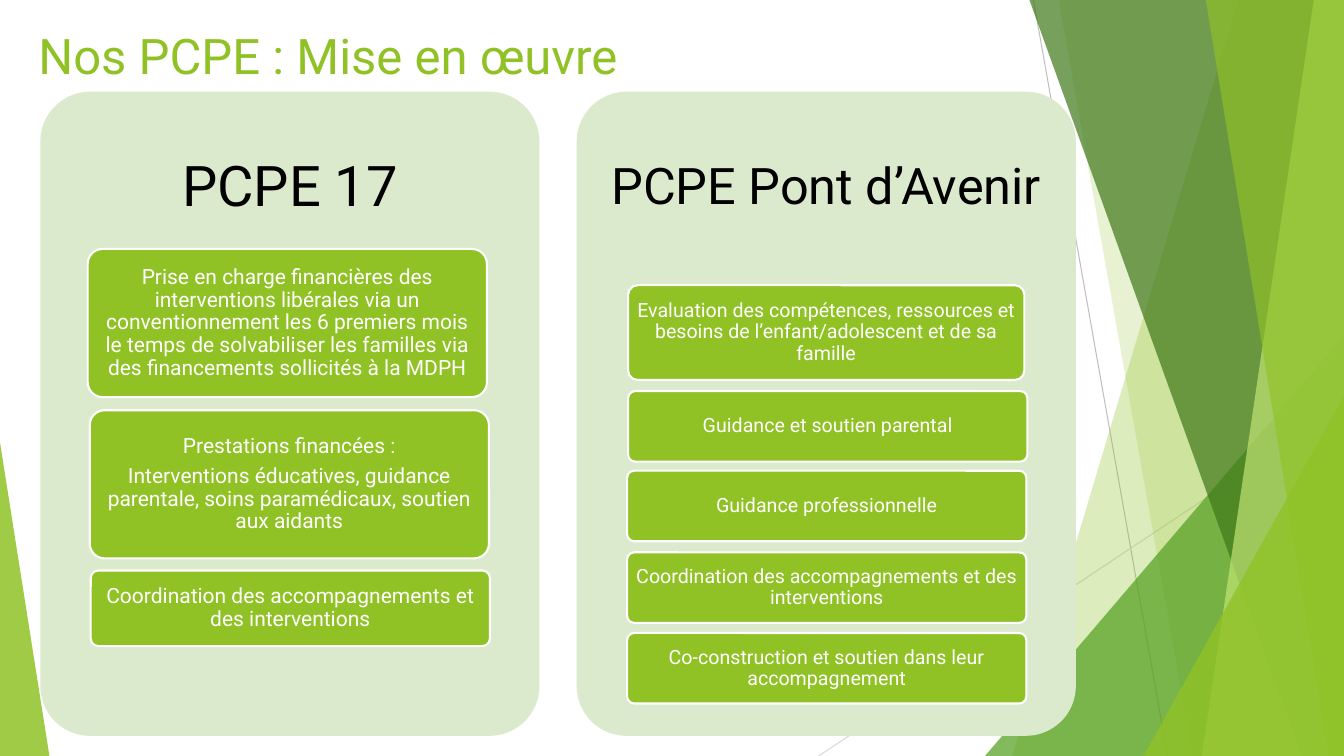
from dataclasses import dataclass

from lxml import etree
from pptx import Presentation
from pptx import util as u
from pptx.dml.color import RGBColor
from pptx.enum import shapes, text
from pptx.oxml.ns import qn

GREEN = "90C226"
PALE = "DBE9CD"
WHITE = "FFFFFF"
BLACK = "000000"
FONT = "Roboto"
WIDTH, HEIGHT = 13.33, 7.5
PANEL_TOP, PANEL_WIDTH, PANEL_HEIGHT, HEADING_HEIGHT = 0.91, 4.95, 6.39, 1.92


@dataclass
class Ray:
    start: tuple[float, float]
    end: tuple[float, float]
    colour: str


@dataclass
class Band:
    top: float
    bottom: float
    colour: str
    opacity: int


@dataclass
class Corner:
    left: float
    top: float
    width: float
    apex: float
    colour: str
    opacity: int


@dataclass
class Card:
    left: float
    top: float
    width: float
    height: float
    lines: list[str]


@dataclass
class Panel:
    left: float
    heading: str
    heading_size: int
    heading_inset: float
    card_size: int
    card_inset: float
    cards: list[Card]


RAYS = [
    Ray((10.25, 0), (11.58, HEIGHT), "BFBFBF"),
    Ray((WIDTH, 4.03), (8.12, HEIGHT), "D9D9D9"),
]
BACK_BANDS = [Band(12.28, 10.04, GREEN, 30), Band(10.5, 11.83, GREEN, 20)]
BACK_CORNER = Corner(9.77, 3.33, 3.56, 1, "54A021", 72)
FRONT_BANDS = [
    Band(10.21, 12.91, "3F7819", 70),
    Band(13.03, 11.92, "C0E474", 70),
    Band(11.96, 13.18, GREEN, 65),
]
FRONT_CORNERS = [
    Corner(11.34, 3.93, 1.99, 1, GREEN, 80),
    Corner(0, 4.39, 0.49, 0, GREEN, 85),
]
PANELS = [
    Panel(0.4, "PCPE 17", 40, 0.17, 15, 0.08, [
        Card(0.87, 2.47, 3.96, 1.47, [
            "Prise en charge financières des interventions libérales via un "
            "conventionnement les 6 premiers mois le temps de solvabiliser les "
            "familles via des financements sollicités à la MDPH"]),
        Card(0.89, 4.07, 3.96, 1.47, [
            "Prestations financées :",
            "Interventions éducatives, guidance parentale, soins paramédicaux, "
            "soutien aux aidants"]),
        Card(0.9, 5.66, 3.96, 0.75, [
            "Coordination des accompagnements et des interventions"]),
    ]),
    Panel(5.72, "PCPE Pont d’Avenir", 36, 0.15, 14, 0.06, [
        Card(6.23, 2.83, 3.93, 0.94, [
            "Evaluation des compétences, ressources et besoins de "
            "l’enfant/adolescent et de sa famille"]),
        Card(6.23, 3.88, 3.96, 0.7, ["Guidance et soutien parental"]),
        Card(6.22, 4.67, 3.96, 0.7, ["Guidance professionnelle"]),
        Card(6.22, 5.48, 3.96, 0.7, [
            "Coordination des accompagnements et des interventions"]),
        Card(6.22, 6.28, 3.96, 0.7, [
            "Co-construction et soutien dans leur accompagnement"]),
    ]),
]


def rgb(colour: str) -> RGBColor:
    return RGBColor.from_string(colour)


def apply(target, formats: dict) -> None:
    for name, value in formats.items():
        setattr(target, name, value)


def paint(shape, colour: str, opacity: int = 100, outline: str = "") -> None:
    shape.shadow.inherit = False
    shape.fill.solid()
    shape.fill.fore_color.rgb = rgb(colour)
    if opacity < 100:
        tint = shape.fill._xPr.find(qn("a:solidFill"))[0]
        etree.SubElement(tint, qn("a:alpha"), val=str(opacity * 1000))
    if outline:
        shape.line.color.rgb = rgb(outline)
        shape.line.width = u.Pt(1.5)
    else:
        shape.line.fill.background()


def write(shape, lines: list[str], size: int, colour: str, inset: float) -> None:
    frame = shape.text_frame
    apply(frame, {
        "word_wrap": True,
        "auto_size": text.MSO_AUTO_SIZE.NONE,
        "vertical_anchor": text.MSO_ANCHOR.MIDDLE,
        **{f"margin_{side}": u.Inches(inset)
           for side in ("left", "top", "right", "bottom")},
    })
    frame.text = "\n".join(lines)
    for para in frame.paragraphs:
        apply(para, {"alignment": text.PP_ALIGN.CENTER, "line_spacing": 0.9,
                     "space_after": u.Pt(0.35 * size)})
        apply(para.font, {"name": FONT, "size": u.Pt(size)})
        para.font.color.rgb = rgb(colour)


def add_box(page, kind, left: float, top: float, width: float, height: float):
    return page.shapes.add_shape(
        kind, *map(u.Inches, (left, top, width, height)))


def draw_ray(page, ray: Ray) -> None:
    line = page.shapes.add_connector(
        shapes.MSO_CONNECTOR.STRAIGHT, *map(u.Inches, ray.start + ray.end))
    line.line.color.rgb = rgb(ray.colour)
    line.line.width = u.Pt(0.75)
    etree.SubElement(line._element.spPr, qn("a:effectLst"))


def draw_band(page, band: Band) -> None:
    top, bottom, right, floor = map(
        u.Inches, (band.top, band.bottom, WIDTH, HEIGHT))
    builder = page.shapes.build_freeform(top, 0)
    builder.add_line_segments(
        [(right, 0), (right, floor), (bottom, floor)], close=True)
    paint(builder.convert_to_shape(), band.colour, band.opacity)


def draw_corner(page, corner: Corner) -> None:
    triangle = add_box(page, shapes.MSO_SHAPE.ISOSCELES_TRIANGLE, corner.left,
                       corner.top, corner.width, HEIGHT - corner.top)
    triangle.adjustments[0] = corner.apex
    paint(triangle, corner.colour, corner.opacity)


def draw_panel(page, panel: Panel) -> None:
    rounded = shapes.MSO_SHAPE.ROUNDED_RECTANGLE
    back = add_box(page, rounded, panel.left, PANEL_TOP, PANEL_WIDTH, PANEL_HEIGHT)
    back.adjustments[0] = 0.1
    paint(back, PALE)
    heading = page.shapes.add_textbox(
        *map(u.Inches, (panel.left, PANEL_TOP, PANEL_WIDTH, HEADING_HEIGHT)))
    write(heading, [panel.heading], panel.heading_size, BLACK, panel.heading_inset)
    for card in panel.cards:
        box = add_box(page, rounded, card.left, card.top, card.width, card.height)
        box.adjustments[0] = 0.1
        paint(box, GREEN, outline=WHITE)
        write(box, card.lines, panel.card_size, WHITE, panel.card_inset)


def draw_title(page, words: str) -> None:
    title = page.shapes.title
    apply(title, {"left": u.Inches(0.28), "top": u.Inches(0.2),
                  "width": u.Inches(9.4), "height": u.Inches(1.44)})
    title.text_frame.text = words
    apply(title.text_frame, {"auto_size": text.MSO_AUTO_SIZE.NONE,
                             "vertical_anchor": text.MSO_ANCHOR.TOP})
    para = title.text_frame.paragraphs[0]
    para.alignment = text.PP_ALIGN.LEFT
    apply(para.font, {"name": FONT, "size": u.Pt(35)})
    para.font.color.rgb = rgb(GREEN)


def main() -> None:
    deck = Presentation()
    apply(deck, {"slide_width": u.Inches(WIDTH), "slide_height": u.Inches(HEIGHT)})
    page = deck.slides.add_slide(deck.slide_layouts[5])
    draw_title(page, "Nos PCPE : Mise en œuvre")
    for ray in RAYS:
        draw_ray(page, ray)
    for band in BACK_BANDS:
        draw_band(page, band)
    draw_corner(page, BACK_CORNER)
    for band in FRONT_BANDS:
        draw_band(page, band)
    for corner in FRONT_CORNERS:
        draw_corner(page, corner)
    for panel in PANELS:
        draw_panel(page, panel)
    deck.save("out.pptx")


if __name__ == "__main__":
    main()
